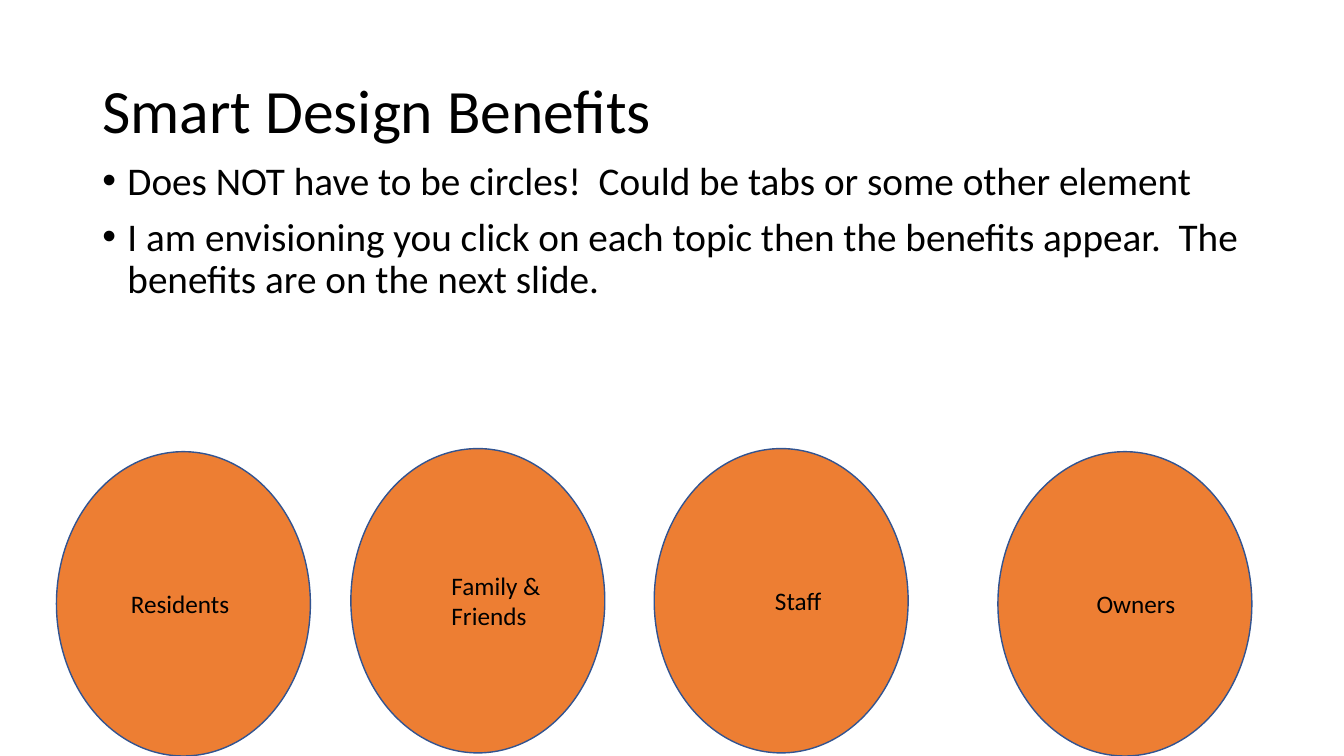
from lxml import etree
from pptx import Presentation
from pptx.dml.color import RGBColor
from pptx.enum.shapes import MSO_SHAPE
from pptx.enum.text import MSO_ANCHOR, MSO_AUTO_SIZE, PP_ALIGN
from pptx.oxml.ns import qn
from pptx.util import Pt

OVAL = MSO_SHAPE.OVAL
LEFT = PP_ALIGN.LEFT
TOP, MIDDLE = MSO_ANCHOR.TOP, MSO_ANCHOR.MIDDLE
NO_FIT, GROW = MSO_AUTO_SIZE.NONE, MSO_AUTO_SIZE.SHAPE_TO_FIT_TEXT

COLORS = {"text": "000000", "circle": "ED7E33", "outline": "325491"}
FONT = "Calibri"

CIRCLE_W, CIRCLE_H = 181.4, 217.4
LABEL_W = 89.3
# Topic, circle left and top, label left and height
TOPICS = [
    ("Residents", 40.3, 322.6, 86.4, 28.8),
    ("Family & Friends", 250.6, 320.4, 315.4, 51),
    ("Staff", 467.3, 320.4, 546.5, 28.8),
    ("Owners", 712.8, 322.6, 776.2, 28.8),
]
BULLETS = [
    "Does NOT have to be circles!  Could be tabs or some other element",
    "I am envisioning you click on each topic then the benefits appear.  "
    "The benefits are on the next slide.",
]


class SlideBuilder:
    """Holds the style and the current slide."""

    def __init__(self, prs):
        self.slide = prs.slides.add_slide(prs.slide_layouts[5])

    def color(self, name):
        return RGBColor.from_string(COLORS[name])

    def fill_text(self, shape, paragraphs, size, frame=None, para=None):
        tf = shape.text_frame
        frame_values = {"word_wrap": True, "auto_size": NO_FIT,
                        "vertical_anchor": TOP, **(frame or {})}
        for name, value in frame_values.items():
            setattr(tf, name, value)
        for i, text in enumerate(paragraphs):
            p = tf.add_paragraph() if i else tf.paragraphs[0]
            for name, value in {"alignment": LEFT, **(para or {})}.items():
                setattr(p, name, value)
            r = p.add_run()
            r.text = text
            for name, value in {"name": FONT, "size": Pt(size)}.items():
                setattr(r.font, name, value)
            r.font.color.rgb = self.color("text")
        return tf

    def title(self, text, x, y, w, h):
        s = self.slide.shapes.title
        box = {"left": x, "top": y, "width": w, "height": h}
        for name, value in box.items():
            setattr(s, name, Pt(value))
        self.fill_text(s, [text], 44, {"vertical_anchor": MIDDLE},
                       {"line_spacing": 0.9})

    def text(self, paragraphs, x, y, w, h, size, frame=None, para=None):
        s = self.slide.shapes.add_textbox(Pt(x), Pt(y), Pt(w), Pt(h))
        return self.fill_text(s, paragraphs, size, frame, para)

    def bullets(self, items, x, y, w, h):
        tf = self.text(items, x, y, w, h, 28,
                       para={"line_spacing": 0.9, "space_before": Pt(10)})
        for p in tf.paragraphs:
            pPr = p._p.get_or_add_pPr()
            pPr.set("marL", str(Pt(18)))
            pPr.set("indent", str(Pt(-18)))
            etree.SubElement(pPr, qn("a:buFont")).set("typeface", "Arial")
            etree.SubElement(pPr, qn("a:buChar")).set("char", "•")

    def circle(self, x, y):
        s = self.slide.shapes.add_shape(OVAL, Pt(x), Pt(y),
                                        Pt(CIRCLE_W), Pt(CIRCLE_H))
        s.shadow.inherit = False
        s.fill.solid()
        s.fill.fore_color.rgb = self.color("circle")
        s.line.color.rgb = self.color("outline")
        s.line.width = Pt(1)


def main():
    prs = Presentation()
    prs.slide_width, prs.slide_height = Pt(960), Pt(540)
    builder = SlideBuilder(prs)

    # Title and notes on the idea
    builder.title("Smart Design Benefits", 66, 28.8, 828, 104.4)
    builder.bullets(BULLETS, 66, 111.6, 828, 342.7)

    # Topic circles, each label centred on its circle's height
    for topic, x, y, label_x, label_h in TOPICS:
        builder.circle(x, y)
        builder.text([topic], label_x, y + (CIRCLE_H - label_h) / 2,
                     LABEL_W, label_h, 18, {"auto_size": GROW})

    prs.save("out.pptx")


if __name__ == "__main__":
    main()
